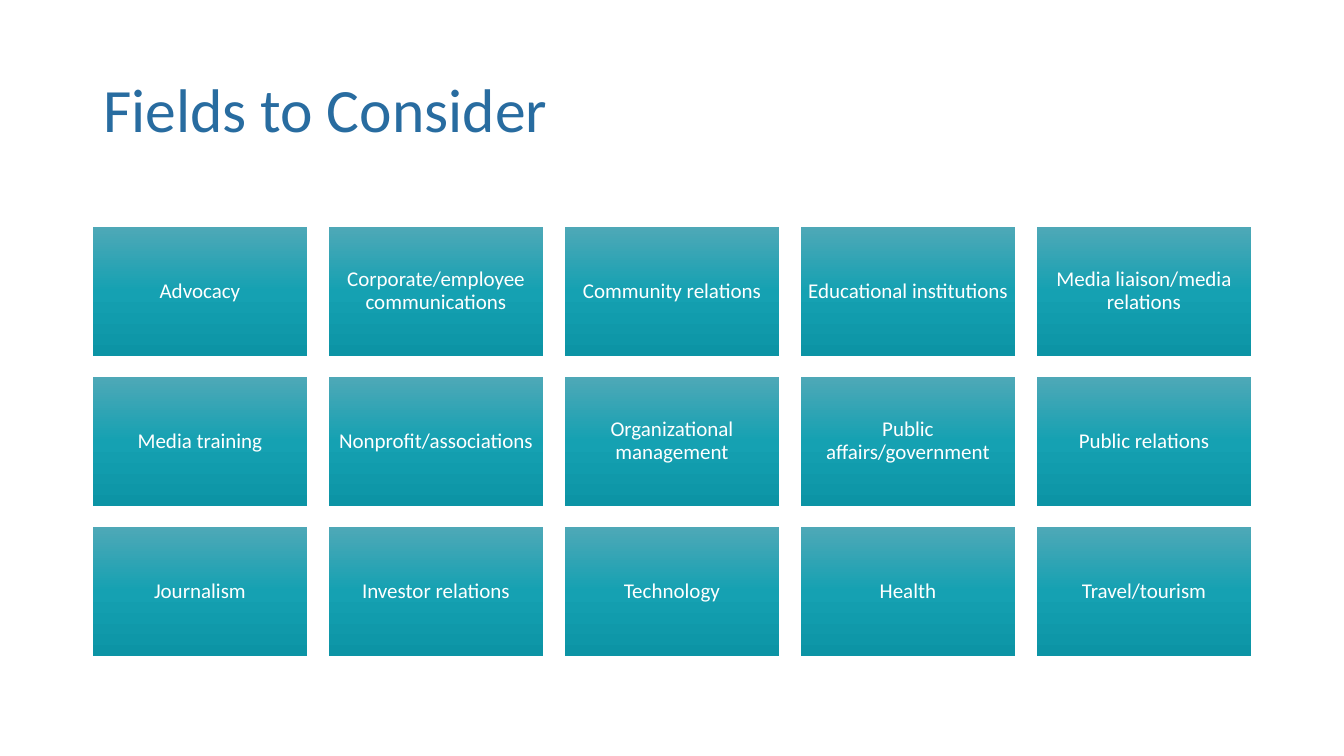
import copy
import dataclasses

import pptx
import pptx.dml.color
import pptx.enum.shapes
import pptx.enum.text
import pptx.util

SCALE = 12192000 / 1344
ALIGN = pptx.enum.text.PP_ALIGN
MIDDLE = pptx.enum.text.MSO_ANCHOR.MIDDLE
FIELDS = [
    ["Advocacy", "Corporate/employee communications", "Community relations",
     "Educational institutions", "Media liaison/media relations"],
    ["Media training", "Nonprofit/associations", "Organizational management",
     "Public affairs/government", "Public relations"],
    ["Journalism", "Investor relations", "Technology", "Health",
     "Travel/tourism"],
]


@dataclasses.dataclass(frozen=True)
class Theme:
    face: str = "Calibri"
    title: str = "286CA0"
    label: str = "FFFFFF"
    tile: tuple = ((0, "4EA8B7"), (0.5, "15A1B2"), (1, "0C94A5"))
    large: int = 44
    small: int = 15


THEME = Theme()


def px(count):
    return pptx.util.Emu(round(count * SCALE))


def rgb(code):
    return pptx.dml.color.RGBColor.from_string(code)


def apply(target, values):
    for name, value in values.items():
        setattr(target, name, value)


def place(shape, left, top, width, height):
    apply(shape, {"left": px(left), "top": px(top),
                  "width": px(width), "height": px(height)})


def write(shape, text, size, color, align, frame):
    apply(shape.text_frame, {"word_wrap": True, "vertical_anchor": MIDDLE,
                             "auto_size": pptx.enum.text.MSO_AUTO_SIZE.NONE,
                             **frame})
    para = shape.text_frame.paragraphs[0]
    apply(para, {"text": text, "alignment": align, "line_spacing": 0.9})
    apply(para.font, {"name": THEME.face, "size": pptx.util.Pt(size)})
    para.font.color.rgb = rgb(color)


def shade(shape, stops):
    fill = shape.fill
    fill.gradient()
    fill.gradient_angle = 270
    holder = shape.element.spPr.xpath("a:gradFill/a:gsLst")[0]
    holder.insert(1, copy.deepcopy(holder[0]))
    for stop, (spot, code) in zip(fill.gradient_stops, stops):
        stop.position = spot
        stop.color.rgb = rgb(code)


def add_title(slide, text):
    title = slide.shapes.title
    place(title, 93, 40, 1159, 146)
    write(title, text, THEME.large, THEME.title, ALIGN.LEFT, {})


def add_tile(slide, text, left, top):
    kind = pptx.enum.shapes.MSO_SHAPE.RECTANGLE
    tile = slide.shapes.add_shape(kind, 0, 0, 0, 0)
    place(tile, left, top, 214, 129)
    tile.shadow.inherit = False
    tile.line.fill.background()
    shade(tile, THEME.tile)
    sides = ("left", "top", "right", "bottom")
    inset = {f"margin_{side}": px(6) for side in sides}
    write(tile, text, THEME.small, THEME.label, ALIGN.CENTER, inset)


def main():
    deck = pptx.Presentation()
    apply(deck, {"slide_width": px(1344), "slide_height": px(756)})
    slide = deck.slides.add_slide(deck.slide_layouts[5])
    add_title(slide, "Fields to Consider")
    for row, names in enumerate(FIELDS):
        for col, name in enumerate(names):
            add_tile(slide, name, 93 + 236 * col, 227 + 150 * row)
    deck.save("out.pptx")


if __name__ == "__main__":
    main()
